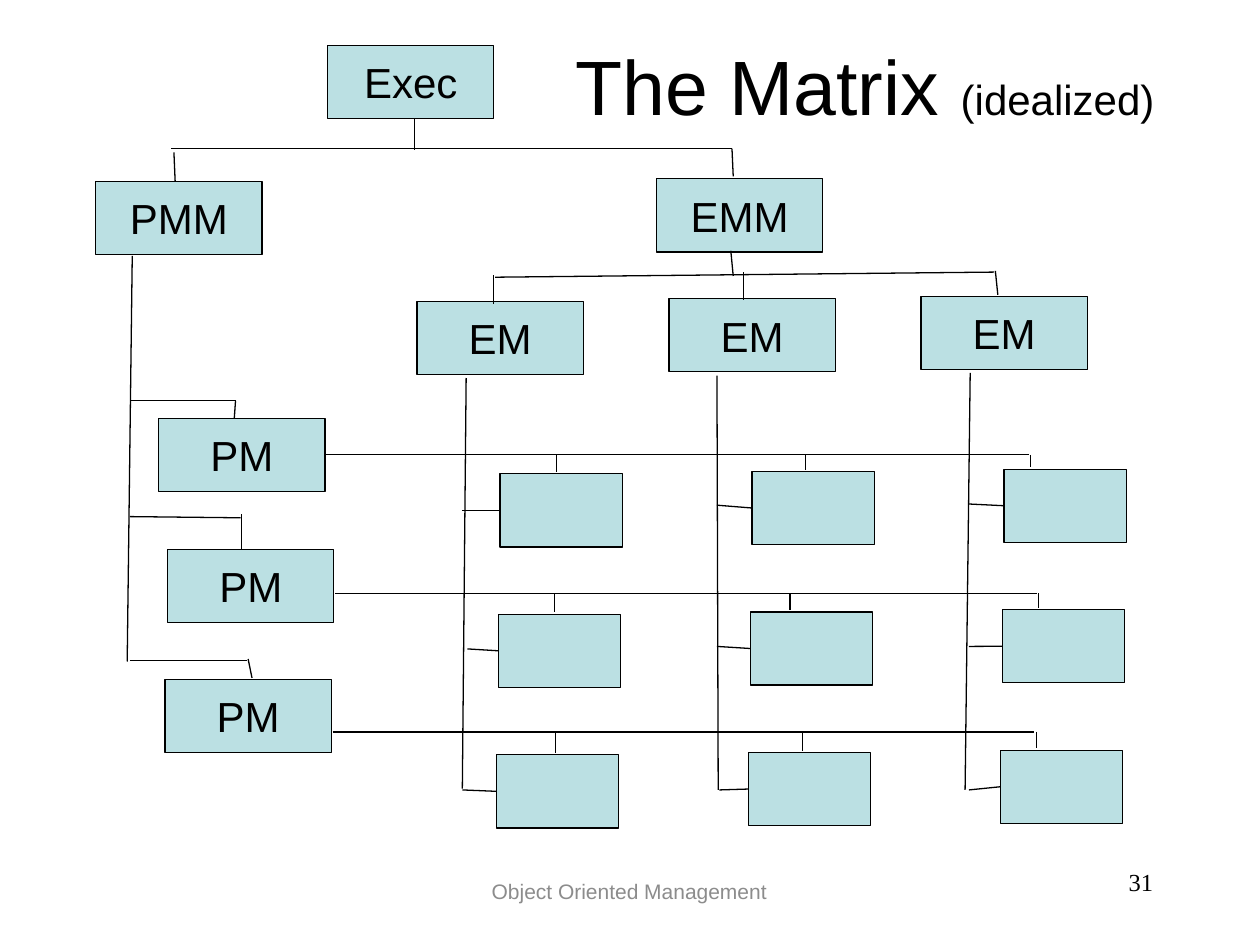
import pptx
import pptx.dml.color
import pptx.enum.shapes
import pptx.enum.text
import pptx.oxml
import pptx.util

Pt = pptx.util.Pt
ALIGN = pptx.enum.text.PP_ALIGN
ANCHOR = pptx.enum.text.MSO_ANCHOR
COLORS = {"ink": "000000", "box": "BBE0E3", "footer": "8C8C8C"}


class ChartSlide:
    """Holds the style and the current slide of an organisation chart."""

    def __init__(self, slide):
        self.slide = slide
        self.font = "Arial"
        self.line_width = Pt(0.75)

    def color(self, name):
        return pptx.dml.color.RGBColor.from_string(COLORS[name])

    def format_run(self, run, size, color="ink", font=None):
        run.font.name = font or self.font
        run.font.size = Pt(size)
        run.font.color.rgb = self.color(color)

    def title(self, left, top, width, height, parts):
        shape = self.slide.shapes.title
        shape.left, shape.top = Pt(left), Pt(top)
        shape.width, shape.height = Pt(width), Pt(height)
        frame = shape.text_frame
        frame.auto_size = pptx.enum.text.MSO_AUTO_SIZE.NONE
        frame.vertical_anchor = ANCHOR.MIDDLE
        paragraph = frame.paragraphs[0]
        paragraph.alignment = ALIGN.CENTER
        for text, size in parts:
            run = paragraph.add_run()
            run.text = text
            self.format_run(run, size)

    def box(self, left, top, text="", width=95, height=41.8):
        shape = self.slide.shapes.add_shape(
            pptx.enum.shapes.MSO_SHAPE.RECTANGLE,
            Pt(left), Pt(top), Pt(width), Pt(height))
        shape.shadow.inherit = False
        shape.fill.solid()
        shape.fill.fore_color.rgb = self.color("box")
        shape.line.color.rgb = self.color("ink")
        shape.line.width = self.line_width
        if text:
            frame = shape.text_frame
            frame.text = text
            frame.word_wrap = False
            frame.vertical_anchor = ANCHOR.MIDDLE
            frame.paragraphs[0].alignment = ALIGN.CENTER
            self.format_run(frame.paragraphs[0].runs[0], 24)
        return shape

    def line(self, x1, y1, x2, y2):
        connector = self.slide.shapes.add_connector(
            pptx.enum.shapes.MSO_CONNECTOR.STRAIGHT,
            Pt(x1), Pt(y1), Pt(x2), Pt(y2))
        connector.line.color.rgb = self.color("ink")
        connector.line.width = self.line_width
        connector._element.spPr.append(pptx.oxml.parse_xml(
            '<a:effectLst xmlns:a="http://schemas.openxmlformats.org/drawingml/2006/main"/>'))
        return connector

    def label(self, left, top, width, height, text, size, align, anchor, color="ink", font=None):
        shape = self.slide.shapes.add_textbox(Pt(left), Pt(top), Pt(width), Pt(height))
        frame = shape.text_frame
        frame.text = text
        frame.word_wrap = True
        frame.vertical_anchor = anchor
        frame.paragraphs[0].alignment = align
        self.format_run(frame.paragraphs[0].runs[0], size, color, font)


def draw_managers(chart):
    chart.box(187.2, 25.9, "Exec")
    chart.box(54.7, 103.7, "PMM")
    chart.box(375.1, 102.2, "EMM")
    for column in range(3):
        chart.box(238.3 + 144 * column, 172.1 - 1.4 * column, "EM")
    for ends in (
        (236.9, 67.7, 236.9, 85.7),
        (97.9, 85, 418.3, 85),
        (99.4, 87.1, 100.1, 103.7),
        (418.3, 85, 419, 100.8),
        (419, 157.7, 417.6, 143.3),
        (283, 158.4, 568.1, 155.5),
        (282.2, 173.5, 282.2, 157),
        (424.8, 171.4, 424.8, 155.5),
        (570.2, 168.5, 568.8, 154.8),
        (75.6, 146.2, 72.7, 378),
        (74.9, 229, 134.6, 229),
        (134.6, 229, 133.9, 239),
        (74.2, 295.2, 137.5, 295.9),
        (138.2, 314.6, 138.2, 293.8),
        (74.2, 377.3, 141.1, 377.3),
        (144, 387.4, 141.8, 376.6),
    ):
        chart.line(*ends)


def draw_matrix(chart):
    project_positions = ((90.7, 239), (95.8, 313.9), (94.3, 388.1))
    projects = [chart.box(left, top, "PM") for left, top in project_positions]
    cells = [[chart.box(285.8 + 144 * column - 1.1 * row,
                        270.7 - 1.3 * column + 80.3 * row, width=69.8)
              for column in range(3)] for row in range(3)]

    rails = ((186.5, 588.2), (191.5, 592.6), (190.1, 591.1))
    taps = ((318.2, 460.1, 589), (316.8, 451.4, 593.6), (317.5, 458.6, 592.2))
    for row, (start, end) in enumerate(rails):
        height = 259.9 + 79.2 * row
        rail = chart.line(start, height, end, height)
        if row == 0:
            rail.begin_connect(projects[row], 3)
        for tap, cell in zip(taps[row], cells[row]):
            chart.line(tap, height, tap, cell.top.pt - 1)

    trunks = ((266.4, 216, 264.2, 450.7), (409.7, 214.6, 410.4, 451.4),
              (554.4, 213.1, 551.5, 451.4))
    branch_starts = ((264.2, 267.1, 264.2), (409.7, 409.7, 411.1), (553.7, 553.7, 553.7))
    branch_heights = ((291.6, 370.8, 451.4), (288.7, 369.4, 451.4), (288, 369.4, 451.4))
    for column, trunk in enumerate(trunks):
        chart.line(*trunk)
        for row in range(3):
            start, height = branch_starts[column][row], branch_heights[column][row]
            branch = chart.line(start, height, cells[row][column].left.pt, height)
            branch.end_connect(cells[row][column], 1)


def main():
    presentation = pptx.Presentation()
    presentation.slide_width, presentation.slide_height = Pt(720), Pt(540)
    chart = ChartSlide(presentation.slides.add_slide(presentation.slide_layouts[5]))
    chart.title(282.2, 18.7, 424.1, 59.8, (("The Matrix ", 44), ("(idealized)", 24)))
    draw_managers(chart)
    draw_matrix(chart)
    chart.label(212.4, 491.8, 294.5, 35.3, "Object Oriented Management", 12,
                ALIGN.CENTER, ANCHOR.MIDDLE, "footer")
    chart.label(516.2, 491.8, 149.8, 35.3, "31", 14, ALIGN.RIGHT, ANCHOR.TOP,
                font="Times New Roman")
    presentation.save("out.pptx")


if __name__ == "__main__":
    main()
